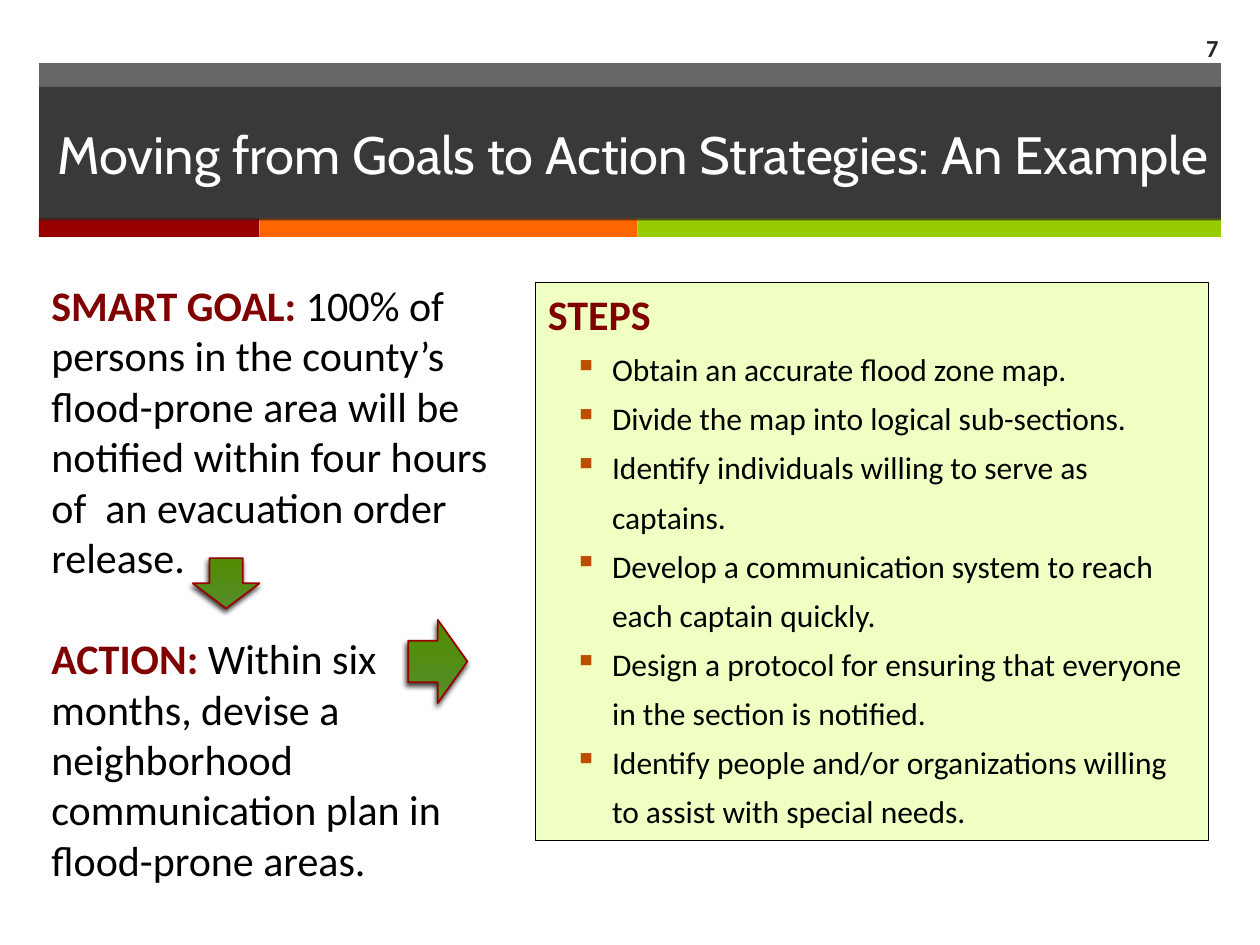
from dataclasses import dataclass

from lxml.etree import SubElement
from pptx import Presentation
from pptx.dml.color import RGBColor
from pptx.enum.shapes import MSO_SHAPE
from pptx.enum.text import MSO_ANCHOR, MSO_AUTO_SIZE, PP_ALIGN
from pptx.oxml.ns import qn
from pptx.util import Inches, Pt

WHITE = RGBColor(0xFF, 0xFF, 0xFF)
BLACK = RGBColor(0x00, 0x00, 0x00)
CHARCOAL = RGBColor(0x26, 0x26, 0x26)
RED = RGBColor(0x99, 0x00, 0x00)
ORANGE = RGBColor(0xFF, 0x66, 0x00)
LIME = RGBColor(0x99, 0xCC, 0x00)
MAROON = RGBColor(0x80, 0x00, 0x00)
PALE_GREEN = RGBColor(0xF0, 0xFF, 0xC2)
BULLET = RGBColor(0xBF, 0x4D, 0x00)
GREEN_START = RGBColor(0x54, 0x8E, 0x2B)
GREEN_END = RGBColor(0x52, 0x8C, 0x00)

GOALS = [
    ("SMART GOAL: ", "100% of persons in the county’s flood-prone area will be "
     "notified within four hours of  an evacuation order release."),
    ("ACTION: ", "Within six months, devise a neighborhood communication plan "
     "in flood-prone areas."),
]
STEPS = [
    "Obtain an accurate flood zone map.",
    "Divide the map into logical sub-sections.",
    "Identify individuals willing to serve as captains.",
    "Develop a communication system to reach each captain quickly.",
    "Design a protocol for ensuring that everyone in the section is notified.",
    "Identify people and/or organizations willing to assist with special needs.",
]


@dataclass
class Box:
    left: int
    top: int
    width: int
    height: int

    def share(self, left, top, width, height):
        return Box(
            int(self.left + self.width * left / 100),
            int(self.top + self.height * top / 100),
            int(self.width * width / 100),
            int(self.height * height / 100),
        )

    def frame(self):
        return self.left, self.top, self.width, self.height


def add_panel(page, box, color, alpha=100):
    panel = page.shapes.add_shape(MSO_SHAPE.RECTANGLE, *box.frame())
    panel.shadow.inherit = False
    panel.fill.solid()
    panel.fill.fore_color.rgb = color
    panel.line.fill.background()
    if alpha < 100:
        solid = panel._element.spPr.find(qn("a:solidFill"))
        SubElement(solid[0], qn("a:alpha"), val=str(alpha * 1000))
    return panel


def add_span(para, text, size, color, bold=False, font="Calibri"):
    span = para.add_run()
    span.text = text
    span.font.name = font
    span.font.size = Pt(size)
    span.font.bold = bold
    span.font.color.rgb = color


def set_indent(para, margin, hanging):
    properties = para._p.get_or_add_pPr()
    properties.set("marL", str(Inches(margin)))
    properties.set("indent", str(-Inches(hanging)))
    return properties


def add_bullet(para):
    properties = set_indent(para, 0.51, 0.3)
    color = SubElement(properties, qn("a:buClr"))
    SubElement(color, qn("a:srgbClr"), val=str(BULLET))
    SubElement(properties, qn("a:buChar"), char="▪")


def add_header(page, box):
    add_panel(page, box.share(0, 0, 100, 89.86), CHARCOAL, 70)
    left = 0
    for color, width in ((RED, 18.66), (ORANGE, 31.98), (LIME, 49.36)):
        add_panel(page, box.share(left, 89.13, width, 10.87), color)
        left += width
    title = add_panel(page, box.share(0, 13.77, 100, 76.81), CHARCOAL, 70)
    title.text_frame.word_wrap = True
    title.text_frame.vertical_anchor = MSO_ANCHOR.MIDDLE
    para = title.text_frame.paragraphs[0]
    para.alignment = PP_ALIGN.RIGHT
    add_span(para, "Moving from Goals to Action Strategies: An Example",
             30, WHITE, font="Cabin")


def add_page_number(page, box):
    frame = page.shapes.add_textbox(*box.frame()).text_frame
    frame.word_wrap = True
    frame.vertical_anchor = MSO_ANCHOR.MIDDLE
    para = frame.paragraphs[0]
    para.alignment = PP_ALIGN.RIGHT
    add_span(para, "7", 14, CHARCOAL, True)


def add_goals(page, box):
    frame = page.shapes.add_textbox(*box.frame()).text_frame
    frame.word_wrap = True
    for index, (label, wording) in enumerate(GOALS):
        para = frame.add_paragraph() if index else frame.paragraphs[0]
        para.space_before = Pt(29 * index)
        add_span(para, label, 24, MAROON, True)
        add_span(para, wording, 24, BLACK)


def add_steps(page, box):
    panel = add_panel(page, box, PALE_GREEN)
    panel.line.color.rgb = BLACK
    panel.line.width = Pt(0.25)
    frame = panel.text_frame
    frame.word_wrap = True
    frame.auto_size = MSO_AUTO_SIZE.SHAPE_TO_FIT_TEXT
    frame.vertical_anchor = MSO_ANCHOR.TOP
    heading = frame.paragraphs[0]
    heading.alignment = PP_ALIGN.LEFT
    set_indent(heading, 0.3, 0.3)
    add_span(heading, "STEPS", 24, MAROON, True)
    for step in STEPS:
        para = frame.add_paragraph()
        para.alignment = PP_ALIGN.LEFT
        para.line_spacing = 1.3
        add_bullet(para)
        add_span(para, step, 18, BLACK)


def add_arrow(page, box, kind):
    arrow = page.shapes.add_shape(kind, *box.frame())
    arrow.fill.gradient()
    arrow.fill.gradient_angle = 90
    for stop, color in zip(arrow.fill.gradient_stops, (GREEN_START, GREEN_END)):
        stop.color.rgb = color
    arrow.line.color.rgb = RED
    arrow.line.width = Pt(1)
    arrow.shadow.inherit = False
    effects = arrow._element.spPr.find(qn("a:effectLst"))
    shadow = SubElement(effects, qn("a:outerShdw"), blurRad=str(Pt(3)),
                        dist=str(Pt(2)), dir=str(110 * 60000), rotWithShape="0")
    color = SubElement(shadow, qn("a:srgbClr"), val=str(BLACK))
    SubElement(color, qn("a:alpha"), val="75000")


def main():
    deck = Presentation()
    deck.slide_width, deck.slide_height = Inches(10), Inches(7.5)
    page = deck.slides.add_slide(deck.slide_layouts[6])
    slide = Box(0, 0, deck.slide_width, deck.slide_height)
    goals = slide.share(3.1, 28.93, 38.3, 65.87)
    add_header(page, slide.share(3.1, 6.67, 93.8, 18.4))
    add_goals(page, goals)
    add_page_number(page, slide.share(90.8, 2.4, 6.9, 5.2))
    add_steps(page, slide.share(42.5, 29.87, 53.4, 59.07))
    add_arrow(page, goals.share(31.85, 45.75, 13.84, 8.1), MSO_SHAPE.DOWN_ARROW)
    add_arrow(page, goals.share(76.5, 55.67, 12.27, 13.36), MSO_SHAPE.RIGHT_ARROW)
    deck.save("out.pptx")


if __name__ == "__main__":
    main()
